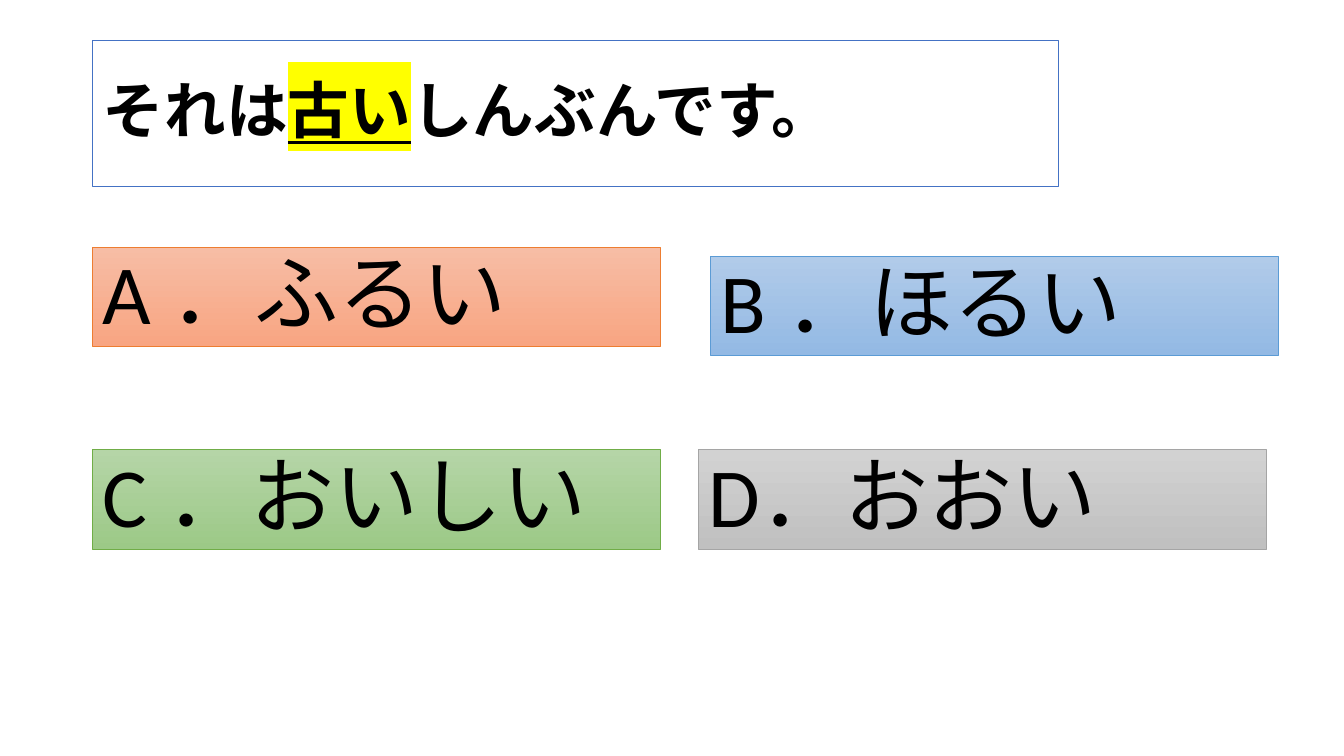
from lxml import etree
from pptx import Presentation
from pptx.dml.color import RGBColor
from pptx.enum.shapes import MSO_SHAPE
from pptx.enum.text import MSO_ANCHOR, MSO_AUTO_SIZE, PP_ALIGN
from pptx.oxml.ns import qn
from pptx.util import Inches, Pt

RECTANGLE = MSO_SHAPE.RECTANGLE
TOP, MIDDLE = MSO_ANCHOR.TOP, MSO_ANCHOR.MIDDLE
LEFT = PP_ALIGN.LEFT
NO_AUTOFIT = MSO_AUTO_SIZE.NONE

FONT = "Calibri"
COLORS = {
    "text": "000000",
    "question_fill": "FFFFFF",
    "question_line": "4472C4",
    "highlight": "FFFF00",
}
COLUMN_LEFT = 0.92
ANSWER_WIDTH, ANSWER_HEIGHT = 5.63, 0.99

# Text, left, top, gradient top, gradient bottom, outline
ANSWERS = [
    ("A ．ふるい", COLUMN_LEFT, 2.45, "F7BDA5", "F8A582", "ED7D31"),
    ("B ．ほるい", 7.05, 2.54, "B1CBE9", "93B9E4", "5B9BD5"),
    ("C ．おいしい", COLUMN_LEFT, 4.46, "B5D5A7", "9CC987", "70AD47"),
    ("D．おおい", 6.93, 4.46, "D2D2D2", "C0C0C0", "A5A5A5"),
]


def place_box(box, left, top, width, height, line_color, line_width, anchor):
    """Position a box and set its outline and text frame."""
    box.left, box.top = Inches(left), Inches(top)
    box.width, box.height = Inches(width), Inches(height)
    box.line.color.rgb = RGBColor.from_string(line_color)
    box.line.width = Pt(line_width)
    frame = box.text_frame
    frame.word_wrap = True
    frame.auto_size = NO_AUTOFIT
    frame.vertical_anchor = anchor


def format_paragraph(para, size, bold):
    para.alignment = LEFT
    para.line_spacing = 0.9
    for span in para.runs:
        span.font.name = FONT
        span.font.size = Pt(size)
        span.font.bold = bold
        span.font.color.rgb = RGBColor.from_string(COLORS["text"])


deck = Presentation()
deck.slide_width, deck.slide_height = Inches(13.33), Inches(7.5)
page = deck.slides.add_slide(deck.slide_layouts[1])

# Question with the tested word highlighted
question = page.shapes.title
place_box(question, COLUMN_LEFT, 0.4, 9.58, 1.45, COLORS["question_line"], 1, MIDDLE)
question.fill.solid()
question.fill.fore_color.rgb = RGBColor.from_string(COLORS["question_fill"])
para = question.text_frame.paragraphs[0]
for words in ("それは", "古い", "しんぶんです。"):
    para.add_run().text = words
format_paragraph(para, 44, True)

tested_word = para.runs[1]
tested_word.font.underline = True
highlight = etree.Element(qn("a:highlight"))
etree.SubElement(highlight, qn("a:srgbClr"), val=COLORS["highlight"])
tested_word.font._element.find(qn("a:solidFill")).addnext(highlight)

# Four answers, the first in the body placeholder
for number, (words, left, top, light, dark, outline) in enumerate(ANSWERS):
    if number == 0:
        box = page.placeholders[1]
    else:
        box = page.shapes.add_shape(RECTANGLE, 0, 0, 0, 0)
        box.shadow.inherit = False
    place_box(box, left, top, ANSWER_WIDTH, ANSWER_HEIGHT, outline, 0.5, TOP)
    box.fill.gradient()
    box.fill.gradient_angle = 270
    for stop, color in zip(box.fill.gradient_stops, (light, dark)):
        stop.color.rgb = RGBColor.from_string(color)

    box.text_frame.text = words
    para = box.text_frame.paragraphs[0]
    format_paragraph(para, 60, False)
    para.space_before = Pt(10)
    properties = para._p.get_or_add_pPr()
    properties.set("marL", "0")
    properties.set("indent", "0")
    etree.SubElement(properties, qn("a:buNone"))

deck.save("out.pptx")
